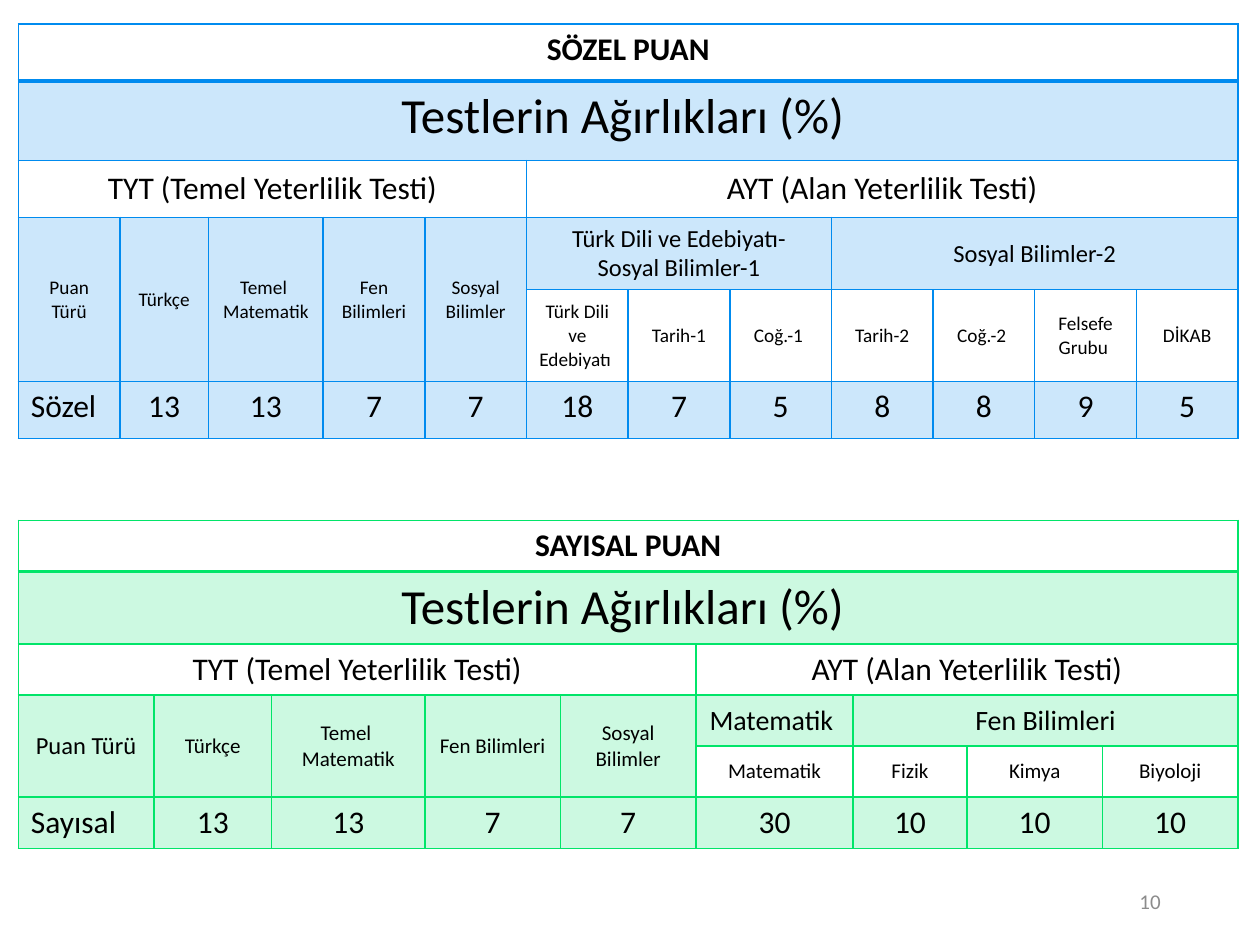
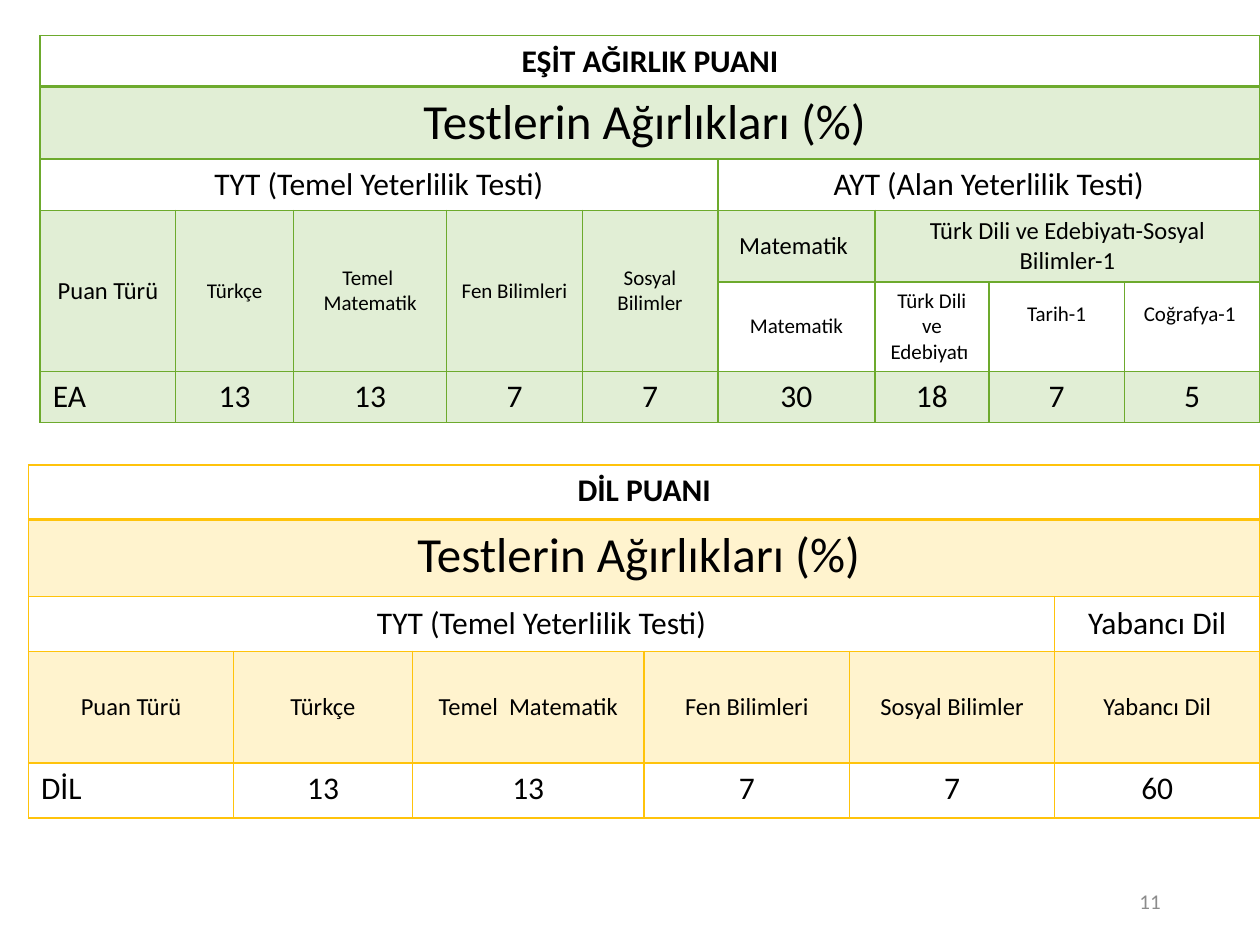
from dataclasses import dataclass

import pptx
import pptx.dml.color
import pptx.enum.text
import pptx.oxml
import pptx.oxml.ns
import pptx.util
from lxml import etree

Pt = pptx.util.Pt
RGB = pptx.dml.color.RGBColor
ALIGN = pptx.enum.text.PP_ALIGN
ANCHOR = pptx.enum.text.MSO_ANCHOR
qn = pptx.oxml.ns.qn


@dataclass(frozen=True)
class Theme:
    font: str = "Calibri"
    text: str = "000000"
    muted: str = "8C8C8C"
    blue: str = "008BEF"
    mint: str = "01E569"
    green: str = "6DAA2D"
    amber: str = "FFC30B"
    tint: int = 20000
    heading: int = 28
    body: int = 18
    number: int = 12
    line: int = 1
    title_line: int = 2


THEME = Theme()
TYT_TESTS = ["Türkçe", "Temel  Matematik", "Fen Bilimleri", "Sosyal Bilimler"]
TYT_WEIGHTS = [13, 13, 7, 7]
TYT_WIDTHS = [1, 0.87, 1.13, 1, 1]
MATH_WIDTHS = [1.16, 0.84, 1, 1]
AYT = "AYT (Alan Yeterlilik Testi)"


@dataclass
class Score:
    title: str
    label: str
    accent: str
    rows: list
    groups: list
    weights: list
    ayt_widths: list
    ayt_title: str = AYT
    label_size: int = 14
    test_size: int = 12
    group_size: int = 14
    tint_weights: bool = True
    raised: tuple = ()


SOZEL = Score(
    "SÖZEL PUAN", "Sözel", THEME.blue, [32.5, 45.5, 32.5, 41, 52.5, 32.5],
    [("Türk Dili ve Edebiyatı- Sosyal Bilimler-1",
      ["Türk Dili ve Edebiyatı ", "Tarih-1", "Coğ.-1 "]),
     ("Sosyal Bilimler-2", ["Tarih-2", "Coğ.-2 ", "Felsefe Grubu ", "DİKAB"])],
    [18, 7, 5, 8, 8, 9, 5], [1] * 7, label_size=11, test_size=11)

SAYISAL = Score(
    "SAYISAL PUAN", "Sayısal", THEME.mint, [29.2, 41.4, 29.2, 29.2, 29.2, 29.2],
    [("Matematik ", ["Matematik"]), ("Fen Bilimleri", ["Fizik", "Kimya", "Biyoloji"])],
    [30, 10, 10, 10], MATH_WIDTHS, group_size=16)

ESIT_AGIRLIK = Score(
    "EŞİT AĞIRLIK PUANI", "EA", THEME.green, [29.2, 41.4, 29.2, 41, 51.2, 29.2],
    [("Matematik ", ["Matematik"]),
     ("Türk Dili ve Edebiyatı-Sosyal Bilimler-1",
      ["Türk Dili ve Edebiyatı ", "Tarih-1", "Coğrafya-1 "])],
    [30, 18, 7, 5], MATH_WIDTHS, raised=("Tarih-1", "Coğrafya-1 "))

DIL = Score(
    "DİL PUANI", "DİL", THEME.amber, [31.2, 44, 31.2, 64, 31.2],
    [(None, ["Yabancı Dil"])], [60], [1], ayt_title="Yabancı Dil",
    test_size=14, tint_weights=False)


def write(tf, text, size=THEME.body, color=THEME.text, bold=False, align=ALIGN.CENTER):
    p = tf.paragraphs[0]
    p.alignment = align
    r = p.add_run()
    r.text = str(text)
    r.font.name = THEME.font
    r.font.size = Pt(size)
    r.font.bold = bold
    r.font.color.rgb = RGB.from_string(color)


def tint(cell, color):
    cell.fill.solid()
    cell.fill.fore_color.rgb = RGB.from_string(color)
    srgb = cell._tc.tcPr.find(qn("a:solidFill")).find(qn("a:srgbClr"))
    etree.SubElement(srgb, qn("a:alpha"), val=str(THEME.tint))


def draw_borders(cell, color, top, bottom):
    tcPr = cell._tc.get_or_add_tcPr()
    widths = {"L": THEME.line, "R": THEME.line, "T": top, "B": bottom}
    for side, width in widths.items():
        ln = etree.SubElement(tcPr, qn(f"a:ln{side}"), w=str(Pt(width)))
        fill = etree.SubElement(ln, qn("a:solidFill"))
        etree.SubElement(fill, qn("a:srgbClr"), val=color)


def add_grid(s, score, left, top, width):
    ratios = TYT_WIDTHS + score.ayt_widths
    unit = width / sum(ratios)
    frame = s.shapes.add_table(len(score.rows), len(ratios), Pt(left), Pt(top),
                               Pt(width), Pt(sum(score.rows)))
    table = frame.table
    table.first_row = table.horz_banding = False
    for column, ratio in zip(table.columns, ratios):
        column.width = Pt(unit * ratio)
    for i, (row, height) in enumerate(zip(table.rows, score.rows)):
        row.height = Pt(height)
        for cell in row.cells:
            draw_borders(cell, score.accent,
                         THEME.title_line if i == 1 else THEME.line,
                         THEME.title_line if i == 0 else THEME.line)
            cell.fill.background()
    return table


def add_score_table(s, score, left, top, width):
    table = add_grid(s, score, left, top, width)
    count = len(table.columns)
    last = len(score.rows) - 1
    first_ayt = len(TYT_WIDTHS)

    def put(row, col, text, rows=1, cols=1, filled=False, anchor=ANCHOR.MIDDLE, **fmt):
        cell = table.cell(row, col)
        if rows * cols > 1:
            cell.merge(table.cell(row + rows - 1, col + cols - 1))
        if filled:
            tint(cell, score.accent)
        cell.vertical_anchor = anchor
        write(cell.text_frame, text, **fmt)
        return cell

    put(0, 0, score.title, cols=count, anchor=ANCHOR.TOP, bold=True)
    put(1, 0, "Testlerin Ağırlıkları (%) ", cols=count, filled=True,
        anchor=ANCHOR.TOP, size=THEME.heading)
    put(2, 0, "TYT (Temel Yeterlilik Testi)", cols=first_ayt)
    put(2, first_ayt, score.ayt_title, cols=count - first_ayt)

    depth = last - 3
    put(3, 0, "Puan Türü", rows=depth, filled=True, size=score.label_size)
    for col, test in enumerate(TYT_TESTS, 1):
        put(3, col, test, rows=depth, filled=True, size=score.test_size)

    col = first_ayt
    for group, tests in score.groups:
        if group:
            put(3, col, group, cols=len(tests), filled=True, size=score.group_size)
        for test in tests:
            cell = put(last - 1, col, test, filled=not group, size=score.test_size)
            if test in score.raised:
                cell.margin_bottom = Pt(18)
            col += 1

    weights = [score.label] + TYT_WEIGHTS + score.weights
    for col, weight in enumerate(weights):
        put(last, col, weight, filled=score.tint_weights, anchor=ANCHOR.TOP,
            align=ALIGN.CENTER if col else ALIGN.LEFT)


def add_page_number(s, number, left=508.3, top=500.4, width=162, height=28.8):
    sp = s.shapes.add_textbox(Pt(left), Pt(top), Pt(width), Pt(height))
    tf = sp.text_frame
    tf.word_wrap = True
    tf.vertical_anchor = ANCHOR.MIDDLE
    write(tf, number, size=THEME.number, color=THEME.muted, align=ALIGN.RIGHT)


def add_score_slide(prs, number, placements):
    s = prs.slides.add_slide(prs.slide_layouts[6])
    for score, left, top, width in placements:
        add_score_table(s, score, left, top, width)
    add_page_number(s, number)


def main():
    prs = pptx.Presentation()
    prs.slide_width, prs.slide_height = Pt(720), Pt(540)
    add_score_slide(prs, 10, [(SOZEL, 10.5, 13.8, 697), (SAYISAL, 10.5, 297.3, 697)])
    add_score_slide(prs, 11, [(DIL, 16.3, 265.8, 703.7), (ESIT_AGIRLIK, 23, 20.4, 697)])
    prs.save("out.pptx")


if __name__ == "__main__":
    main()
